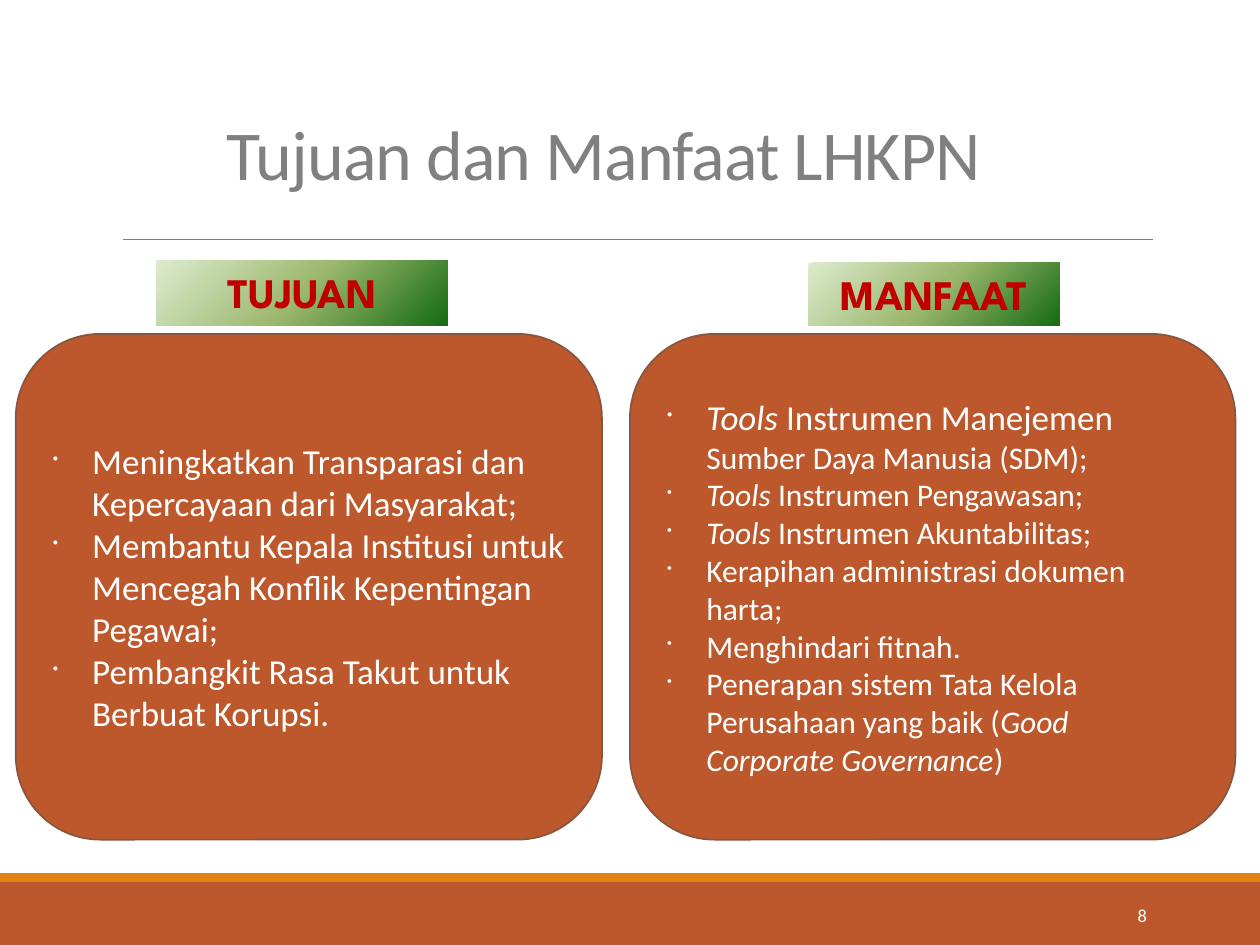
import pptx
import pptx.util
import pptx.oxml
import pptx.oxml.ns
import pptx.dml.color
import pptx.enum.shapes
import pptx.enum.text
import lxml.etree

Pt = pptx.util.Pt
RGBColor = pptx.dml.color.RGBColor
SHAPE = pptx.enum.shapes.MSO_SHAPE
ALIGN = pptx.enum.text.PP_ALIGN
ANCHOR = pptx.enum.text.MSO_ANCHOR
qn = pptx.oxml.ns.qn

RUST = RGBColor(0xBD, 0x58, 0x2C)
ORANGE = RGBColor(0xE4, 0x83, 0x12)
BROWN = RGBColor(0x86, 0x56, 0x40)
GRAY = RGBColor(0x80, 0x80, 0x80)
WHITE = RGBColor(0xFF, 0xFF, 0xFF)
RED = RGBColor(0xC0, 0x00, 0x00)
GREENS = [(0, RGBColor(0xDD, 0xEB, 0xCF)), (50, RGBColor(0x9C, 0xB8, 0x6E)),
          (100, RGBColor(0x15, 0x6B, 0x13))]
A_NS = 'xmlns:a="http://schemas.openxmlformats.org/drawingml/2006/main"'

# Each item is a list of (text, size, italic) runs
GOALS = [
    [("Meningkatkan Transparasi dan Kepercayaan dari Masyarakat;", 20, False)],
    [("Membantu Kepala Institusi untuk Mencegah Konflik Kepentingan Pegawai;", 20, False)],
    [("Pembangkit Rasa Takut untuk Berbuat Korupsi.", 20, False)],
]
BENEFITS = [
    [("Tools ", 20, True), ("Instrumen Manejemen ", 20, False),
     ("Sumber Daya Manusia (SDM);", 18, False)],
    [("Tools ", 18, True), ("Instrumen Pengawasan;", 18, False)],
    [("Tools ", 18, True), ("Instrumen Akuntabilitas;", 18, False)],
    [("Kerapihan administrasi dokumen harta;", 18, False)],
    [("Menghindari fitnah.", 18, False)],
    [("Penerapan sistem Tata Kelola Perusahaan yang baik (", 18, False),
     ("Good Corporate Governance", 18, True), (")", 18, False)],
]


def add_box(s, kind, box, fill=None, line=None):
    sp = s.shapes.add_shape(kind, *map(Pt, box))
    sp.shadow.inherit = False
    if fill is not None:
        sp.fill.solid()
        sp.fill.fore_color.rgb = fill
    if line is None:
        sp.line.fill.background()
    else:
        sp.line.color.rgb = line
        sp.line.width = Pt(1)
    return sp


def add_run(p, text, size, color, font="Calibri", bold=False, italic=False):
    r = p.add_run()
    r.text = text
    r.font.size = Pt(size)
    r.font.name = font
    r.font.bold = bold
    r.font.italic = italic
    r.font.color.rgb = color
    return r


def add_text(s, box, anchor, align):
    tf = s.shapes.add_textbox(*map(Pt, box)).text_frame
    tf.word_wrap = True
    tf.vertical_anchor = anchor
    tf.paragraphs[0].alignment = align
    return tf.paragraphs[0]


def add_title(s, box):
    p = add_text(s, box, ANCHOR.BOTTOM, ALIGN.CENTER)
    p.line_spacing = 0.85
    r = add_run(p, "Tujuan dan Manfaat LHKPN", 40, GRAY)
    props = r.font._element
    props.set("spc", "-50")
    # Soft shadow behind the letters
    props.find(qn("a:solidFill")).addnext(pptx.oxml.parse_xml(
        f'<a:effectLst {A_NS}><a:outerShdw blurRad="38100" dist="38100" dir="2700000">'
        '<a:srgbClr val="000000"><a:alpha val="43000"/></a:srgbClr>'
        '</a:outerShdw></a:effectLst>'))


def add_rule(s, x1, x2, y):
    line = s.shapes.add_connector(pptx.enum.shapes.MSO_CONNECTOR.STRAIGHT,
                                  Pt(x1), Pt(y), Pt(x2), Pt(y))
    line.line.color.rgb = GRAY
    line.line.width = Pt(0.5)
    lxml.etree.SubElement(line._element.spPr, qn("a:effectLst"))


def add_footer(s, box):
    x, y, w, h = box
    stripe = 5
    add_box(s, SHAPE.RECTANGLE, (x, y + stripe, w, h - stripe), RUST)
    add_box(s, SHAPE.RECTANGLE, (x, y, w, stripe), ORANGE)
    p = add_text(s, (x + 584.8, y + 9.4, 77.6, 28.8), ANCHOR.MIDDLE, ALIGN.RIGHT)
    add_run(p, "8", 10.5, WHITE)


def add_label(s, box, text):
    sp = add_box(s, SHAPE.RECTANGLE, box)
    stops = "".join(f'<a:gs pos="{pos * 1000}"><a:srgbClr val="{color}"/></a:gs>'
                    for pos, color in GREENS)
    sp._element.spPr.find(qn("a:prstGeom")).addnext(pptx.oxml.parse_xml(
        f'<a:gradFill {A_NS}><a:gsLst>{stops}</a:gsLst>'
        '<a:lin ang="2700000" scaled="0"/></a:gradFill>'))
    tf = sp.text_frame
    tf.word_wrap = True
    tf.vertical_anchor = ANCHOR.TOP
    p = tf.paragraphs[0]
    p.alignment = ALIGN.CENTER
    add_run(p, text, 24, RED, "League Spartan", bold=True)


def add_panel(s, box, items):
    tf = add_box(s, SHAPE.ROUNDED_RECTANGLE, box, RUST, BROWN).text_frame
    tf.word_wrap = True
    tf.vertical_anchor = ANCHOR.MIDDLE
    for i, runs in enumerate(items):
        p = tf.add_paragraph() if i else tf.paragraphs[0]
        p.alignment = ALIGN.LEFT
        # Small hanging bullet
        props = p._p.get_or_add_pPr()
        props.set("marL", str(Pt(22.5)))
        props.set("indent", str(-Pt(22.5)))
        lxml.etree.SubElement(props, qn("a:buSzPct")).set("val", "45000")
        lxml.etree.SubElement(props, qn("a:buChar")).set("char", "•")
        for text, size, italic in runs:
            add_run(p, text, size, WHITE, italic=italic)


def main():
    prs = pptx.Presentation()
    prs.slide_width, prs.slide_height = Pt(720), Pt(540)
    s = prs.slides.add_slide(prs.slide_layouts[6])
    add_footer(s, (0, 499, 720, 41))
    add_rule(s, 70.5, 659, 136.8)
    add_title(s, (48, 49, 594, 66))
    add_panel(s, (9, 190.8, 335, 289), GOALS)
    add_panel(s, (360, 190.8, 346, 289), BENEFITS)
    add_label(s, (89.2, 148.8, 166.6, 37.4), "TUJUAN")
    add_label(s, (462, 150, 143.6, 36.2), "MANFAAT")
    prs.save("out.pptx")


if __name__ == "__main__":
    main()
